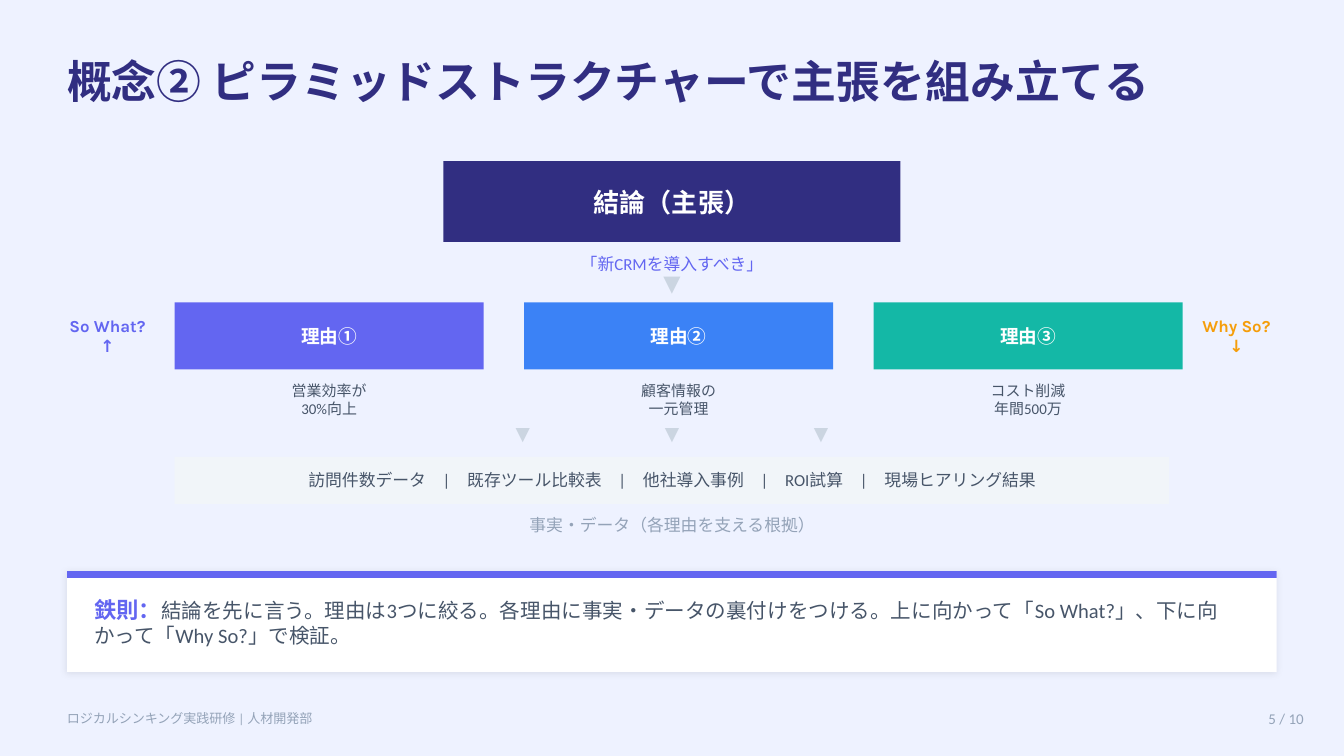
"""Build the pyramid structure slide of a logical thinking course."""
from lxml.etree import SubElement
from pptx import Presentation
from pptx.dml.color import RGBColor
from pptx.enum.shapes import MSO_SHAPE
from pptx.enum.text import MSO_ANCHOR, PP_ALIGN
from pptx.oxml.ns import qn
from pptx.util import Inches, Pt

NAVY = RGBColor(0x31, 0x2E, 0x81)
INDIGO = RGBColor(0x63, 0x66, 0xF1)
BLUE = RGBColor(0x3B, 0x82, 0xF6)
TEAL = RGBColor(0x14, 0xB8, 0xA6)
AMBER = RGBColor(0xF5, 0x9E, 0x0B)
SLATE = RGBColor(0x47, 0x55, 0x69)
MUTED = RGBColor(0x94, 0xA3, 0xB8)
SILVER = RGBColor(0xCB, 0xD5, 0xE1)
MIST = RGBColor(0xF1, 0xF5, 0xF9)
LAVENDER = RGBColor(0xEE, 0xF2, 0xFF)
WHITE = RGBColor(0xFF, 0xFF, 0xFF)
HEADING, BODY = "Karla", "Calibri"

TITLE = "概念② ピラミッドストラクチャーで主張を組み立てる"
CONCLUSION = "結論（主張）"
CLAIM = "「新CRMを導入すべき」"
REASONS = [
    ("理由①", "営業効率が\n30%向上", INDIGO),
    ("理由②", "顧客情報の\n一元管理", BLUE),
    ("理由③", "コスト削減\n年間500万", TEAL),
]
FACTS = ["訪問件数データ", "既存ツール比較表", "他社導入事例", "ROI試算", "現場ヒアリング結果"]
FACTS_CAPTION = "事実・データ（各理由を支える根拠）"
CHECKS = [("So What?\n↑", 0.4, INDIGO), ("Why So?\n↓", 8.8, AMBER)]
RULE_LABEL = "鉄則："
RULE = ("結論を先に言う。理由は3つに絞る。各理由に事実・データの裏付けをつける。"
        "上に向かって「So What?」、下に向かって「Why So?」で検証。")
FOOTER = "ロジカルシンキング実践研修 | 人材開発部"
PAGE = "5 / 10"

REASON_LEFT, REASON_WIDTH, REASON_PITCH = 1.3, 2.3, 2.6
FACTS_WIDTH, ARROW_PITCH = 7.4, 1.11


def write(frame, text, size=9, color=SLATE, font=BODY, bold=False,
          align=PP_ALIGN.CENTER, inset=True, tabs=()):
    frame.word_wrap = True
    frame.vertical_anchor = MSO_ANCHOR.MIDDLE
    if not inset:
        frame.margin_left = frame.margin_right = 0
        frame.margin_top = frame.margin_bottom = 0
    for index, line in enumerate(text.split("\n")):
        paragraph = frame.paragraphs[0] if index == 0 else frame.add_paragraph()
        paragraph.alignment = align
        if tabs:
            stops = SubElement(paragraph._p.get_or_add_pPr(), qn("a:tabLst"))
            for position in tabs:
                SubElement(stops, qn("a:tab"), pos=str(Inches(position)), algn="ctr")
        run = paragraph.add_run()
        run.text = line
        run.font.name, run.font.size = font, Pt(size)
        run.font.bold, run.font.color.rgb = bold, color


def add_label(slide, box, text, inset=False, **style):
    frame = slide.shapes.add_textbox(*map(Inches, box)).text_frame
    write(frame, text, inset=inset, **style)
    return frame


def add_block(slide, box, fill):
    block = slide.shapes.add_shape(MSO_SHAPE.RECTANGLE, *map(Inches, box))
    block.shadow.inherit = False
    block.fill.solid()
    block.fill.fore_color.rgb = fill
    block.line.fill.background()
    return block


def add_soft_shadow(block):
    effects = block._element.spPr.find(qn("a:effectLst"))
    shadow = SubElement(effects, qn("a:outerShdw"), blurRad=str(Pt(4)),
                        dist=str(Pt(1)), dir=str(135 * 60000), rotWithShape="0")
    black = SubElement(shadow, qn("a:srgbClr"), val="000000")
    SubElement(black, qn("a:alpha"), val="8000")


def add_pyramid(slide):
    top = add_block(slide, (3.3, 1.2, 3.4, 0.6), NAVY)
    write(top.text_frame, CONCLUSION, size=14, color=WHITE, font=HEADING,
          bold=True, inset=False)
    add_label(slide, (3.3, 1.85, 3.4, 0.22), CLAIM, color=INDIGO)

    for index, (name, detail, fill) in enumerate(REASONS):
        left = REASON_LEFT + index * REASON_PITCH
        reason = add_block(slide, (left, 2.25, REASON_WIDTH, 0.5), fill)
        write(reason.text_frame, name, size=10, color=WHITE, font=HEADING,
              bold=True, inset=False)
        add_label(slide, (left, 2.8, REASON_WIDTH, 0.35), detail, size=8)

    add_label(slide, (4.7, 1.95, 0.6, 0.3), "▼", size=12, color=SILVER)
    arrow_tabs = [FACTS_WIDTH / 2 + step * ARROW_PITCH for step in (-1, 0, 1)]
    add_label(slide, (REASON_LEFT, 3.1, FACTS_WIDTH, 0.25), "\t▼" * len(arrow_tabs),
              size=10, color=SILVER, align=PP_ALIGN.LEFT, tabs=arrow_tabs)

    add_block(slide, (REASON_LEFT, 3.4, FACTS_WIDTH, 0.35), MIST)
    add_label(slide, (1.5, 3.42, 7, 0.3), "　|　".join(FACTS))
    add_label(slide, (REASON_LEFT, 3.78, FACTS_WIDTH, 0.25), FACTS_CAPTION, color=MUTED)
    for text, left, color in CHECKS:
        add_label(slide, (left, 2.2, 0.8, 0.6), text, color=color,
                  font=HEADING, bold=True)


def add_rule(slide):
    add_soft_shadow(add_block(slide, (0.5, 4.25, 9, 0.75), WHITE))
    add_block(slide, (0.5, 4.25, 9, 0.05), INDIGO)
    frame = add_label(slide, (0.7, 4.35, 8.6, 0.55), RULE_LABEL, size=12,
                      color=INDIGO, font=HEADING, bold=True, align=PP_ALIGN.LEFT)
    write(frame, RULE, size=11, align=PP_ALIGN.LEFT, inset=False)


def main():
    deck = Presentation()
    deck.slide_width = Inches(10)
    deck.slide_height = deck.slide_width * 9 // 16
    slide = deck.slides.add_slide(deck.slide_layouts[6])
    slide.background.fill.solid()
    slide.background.fill.fore_color.rgb = LAVENDER

    add_label(slide, (0.5, 0.3, 9, 0.6), TITLE, size=24, color=NAVY,
              font=HEADING, bold=True, align=PP_ALIGN.LEFT)
    add_pyramid(slide)
    add_rule(slide)
    add_label(slide, (9.1, 5.22, 0.7, 0.25), PAGE, size=8, color=MUTED,
              align=PP_ALIGN.RIGHT, inset=True)
    add_label(slide, (0.4, 5.22, 5, 0.25), FOOTER, size=7, color=MUTED,
              align=PP_ALIGN.LEFT, inset=True)
    deck.save("out.pptx")


if __name__ == "__main__":
    main()
